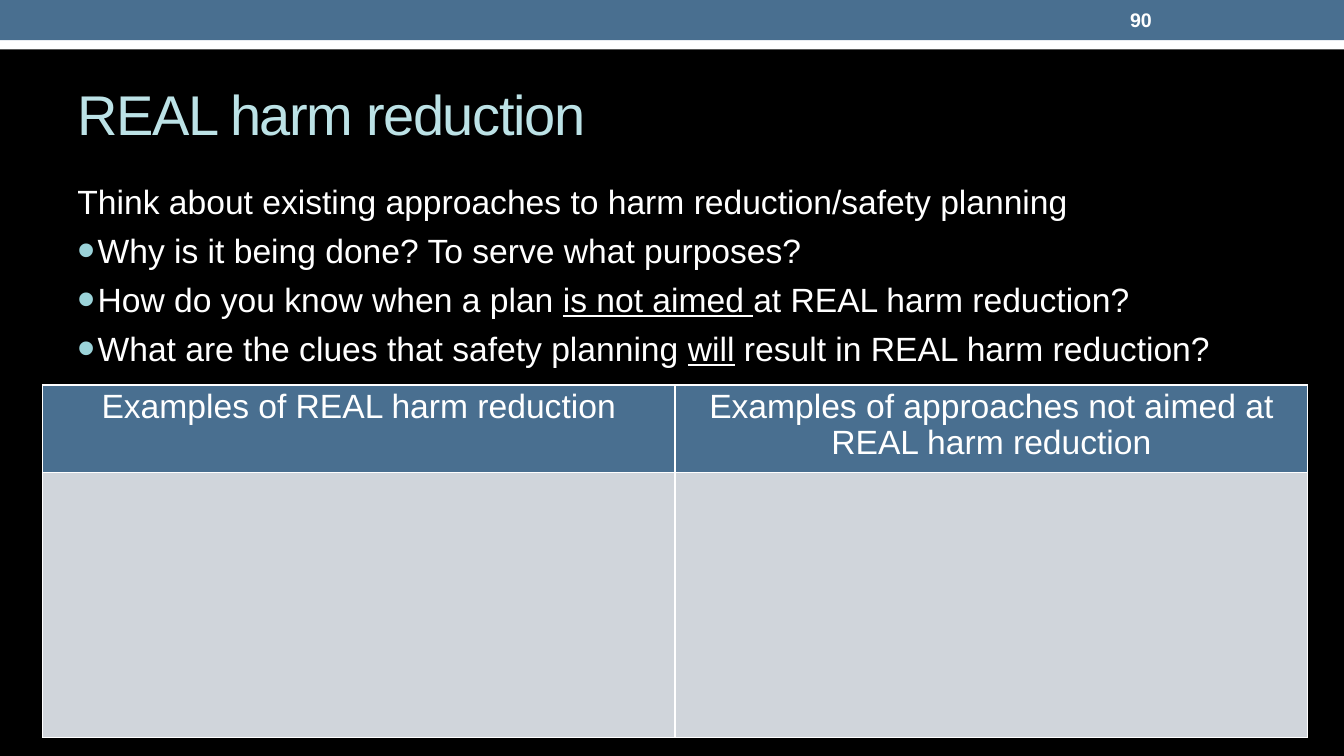
import pptx
import pptx.util
import pptx.dml.color
import pptx.enum.shapes
import pptx.enum.text
import pptx.oxml.ns
from lxml import etree

Inches, Pt = pptx.util.Inches, pptx.util.Pt
RGB = pptx.dml.color.RGBColor.from_string
ANCHOR = pptx.enum.text.MSO_ANCHOR
THEME = {
    "font": "Arial", "black": "000000", "white": "FFFFFF", "blue": "496F90",
    "title": "BCE2E6", "bullet": "9BD3D9", "cell": "D0D5DB",
    "title_size": 40, "body_size": 24, "number_size": 14,
}


def add_run(paragraph, text, size, color="white", **formats):
    run = paragraph.add_run()
    run.text = text
    run.font.color.rgb = RGB(THEME[color])
    formats = {"name": THEME["font"], "size": Pt(THEME[size]), **formats}
    for attribute, value in formats.items():
        setattr(run.font, attribute, value)
    return run


def add_xml(parent, tag, **attributes):
    """Append a DrawingML child element such as a:buChar."""
    return etree.SubElement(parent, pptx.oxml.ns.qn(tag), attributes)


deck = pptx.Presentation()
deck.slide_width, deck.slide_height = Inches(13.33), Inches(7.5)
slide = deck.slides.add_slide(deck.slide_layouts[6])
slide.background.fill.solid()
slide.background.fill.fore_color.rgb = RGB(THEME["black"])

# Header bands
for top, height, color in [(0.24, 0.25, "white"), (0, 0.4, "blue")]:
    band = slide.shapes.add_shape(
        pptx.enum.shapes.MSO_SHAPE.RECTANGLE,
        0, Inches(top), deck.slide_width, Inches(height))
    band.shadow.inherit = False
    band.fill.solid()
    band.fill.fore_color.rgb = RGB(THEME[color])
    band.line.fill.background()

# Text frames
frames = {}
for part, box, anchor in [
    ("title", (0.67, 0.58, 12, 1.08), ANCHOR.MIDDLE),
    ("questions", (0.67, 1.75, 12, 5.33), ANCHOR.TOP),
    ("number", (11.11, 0.02, 1.56, 0.36), ANCHOR.MIDDLE),
]:
    frame = slide.shapes.add_textbox(*map(Inches, box)).text_frame
    frame.word_wrap = True
    frame.vertical_anchor = anchor
    frames[part] = frame

title = add_run(frames["title"].paragraphs[0], "REAL harm reduction",
                "title_size", "title")
title.font._element.set("spc", "-100")
add_run(frames["number"].paragraphs[0], "90", "number_size", bold=True)

# Lead line and bulleted questions; every second piece is underlined
questions = frames["questions"]
lead = questions.paragraphs[0]
lead.space_before = Pt(6)
add_run(lead, "Think about existing approaches to harm reduction/safety planning",
        "body_size")
for pieces in [
    ["Why is it being done? To serve what purposes?"],
    ["How do you know when a plan ", "is not aimed ", "at REAL harm reduction?"],
    ["What are the clues that safety planning ", "will",
     " result in REAL harm reduction?"],
]:
    question = questions.add_paragraph()
    question.space_before = Pt(6)
    properties = question._p.get_or_add_pPr()
    properties.set("marL", str(Inches(0.2)))
    properties.set("indent", str(-Inches(0.2)))
    add_xml(add_xml(properties, "a:buClr"), "a:srgbClr", val=THEME["bullet"])
    add_xml(properties, "a:buSzPct", val="150000")
    add_xml(properties, "a:buFont", typeface=THEME["font"])
    add_xml(properties, "a:buChar", char="•")
    for index, piece in enumerate(pieces):
        add_run(question, piece, "body_size", underline=index % 2 == 1)

# Comparison table
headings = ["Examples of REAL harm reduction",
            "Examples of approaches not aimed at REAL harm reduction"]
row_heights = [0.84, 2.63]
examples = slide.shapes.add_table(
    2, 2, Inches(0.42), Inches(3.82), Inches(12.55),
    Inches(sum(row_heights))).table
for row, height in zip(examples.rows, row_heights):
    row.height = Inches(height)
for column, heading in enumerate(headings):
    examples.columns[column].width = Inches(12.55 / 2)
    paragraph = examples.cell(0, column).text_frame.paragraphs[0]
    paragraph.alignment = pptx.enum.text.PP_ALIGN.CENTER
    paragraph.line_spacing = 0.96
    add_run(paragraph, heading, "body_size", bold=False)
    for row, color in enumerate(["blue", "cell"]):
        cell = examples.cell(row, column)
        properties = cell._tc.get_or_add_tcPr()
        for side in ["a:lnL", "a:lnR", "a:lnT", "a:lnB"]:
            border = add_xml(properties, side, w=str(Pt(1)))
            add_xml(add_xml(border, "a:solidFill"), "a:srgbClr",
                    val=THEME["white"])
        cell.fill.solid()
        cell.fill.fore_color.rgb = RGB(THEME[color])

deck.save("out.pptx")
